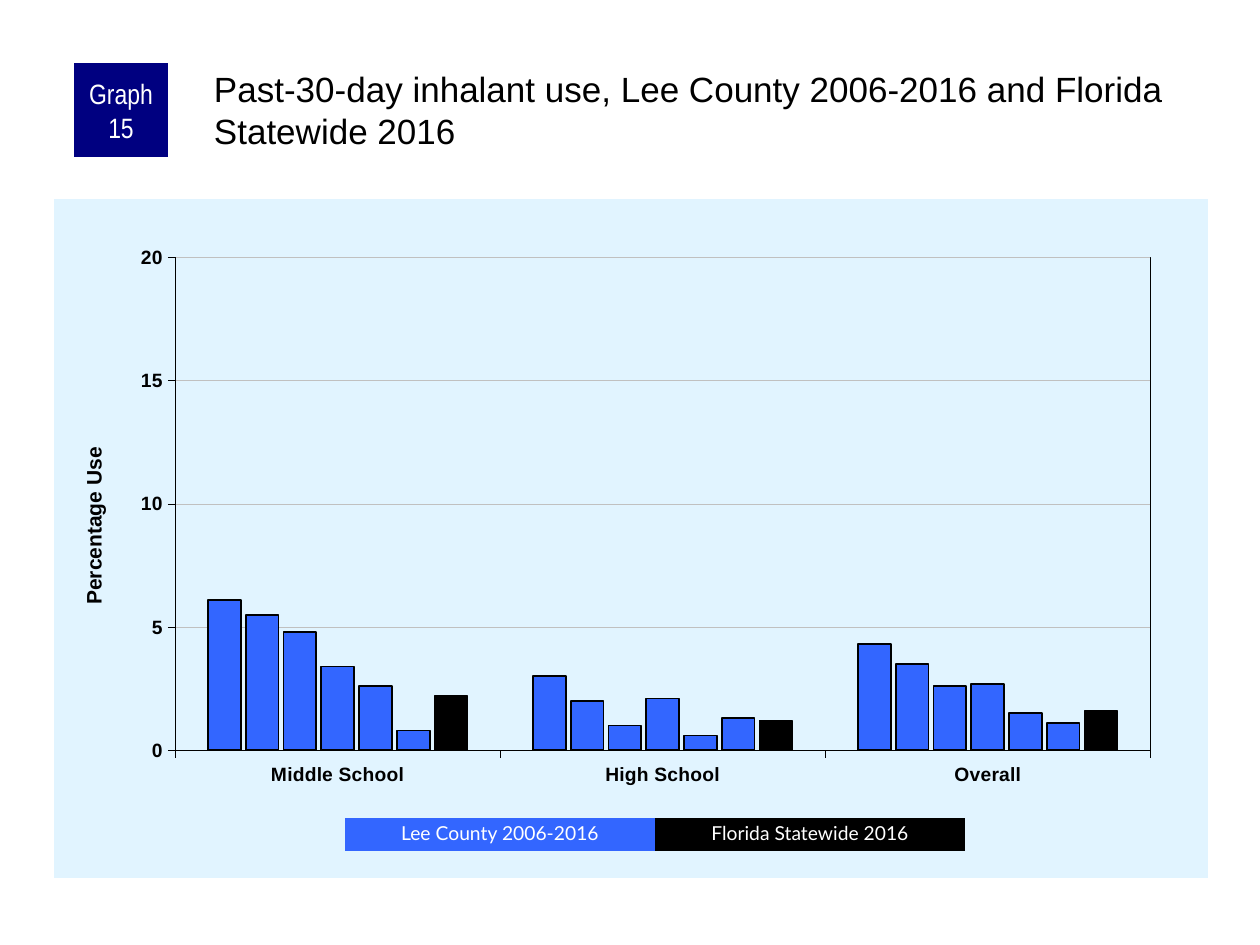
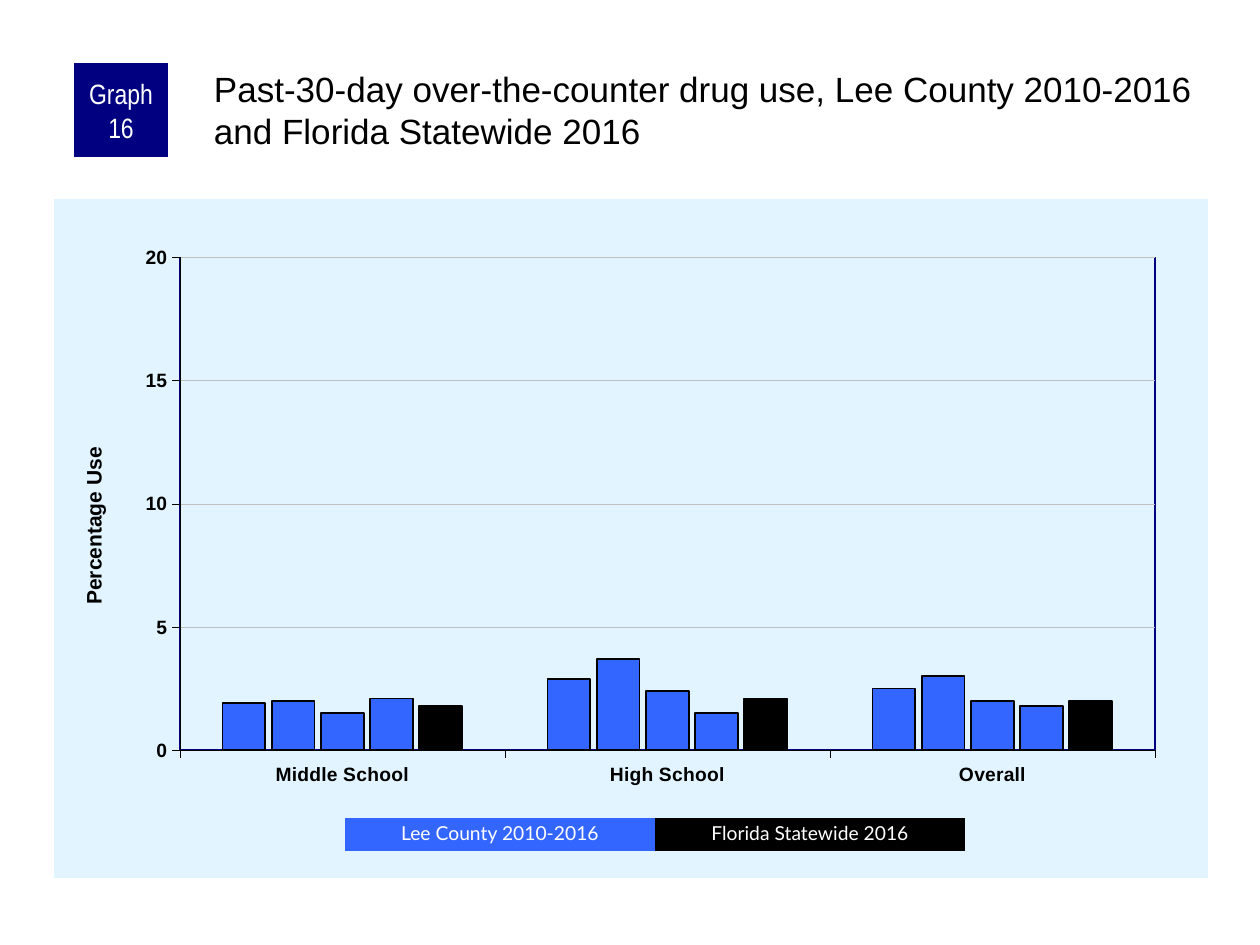
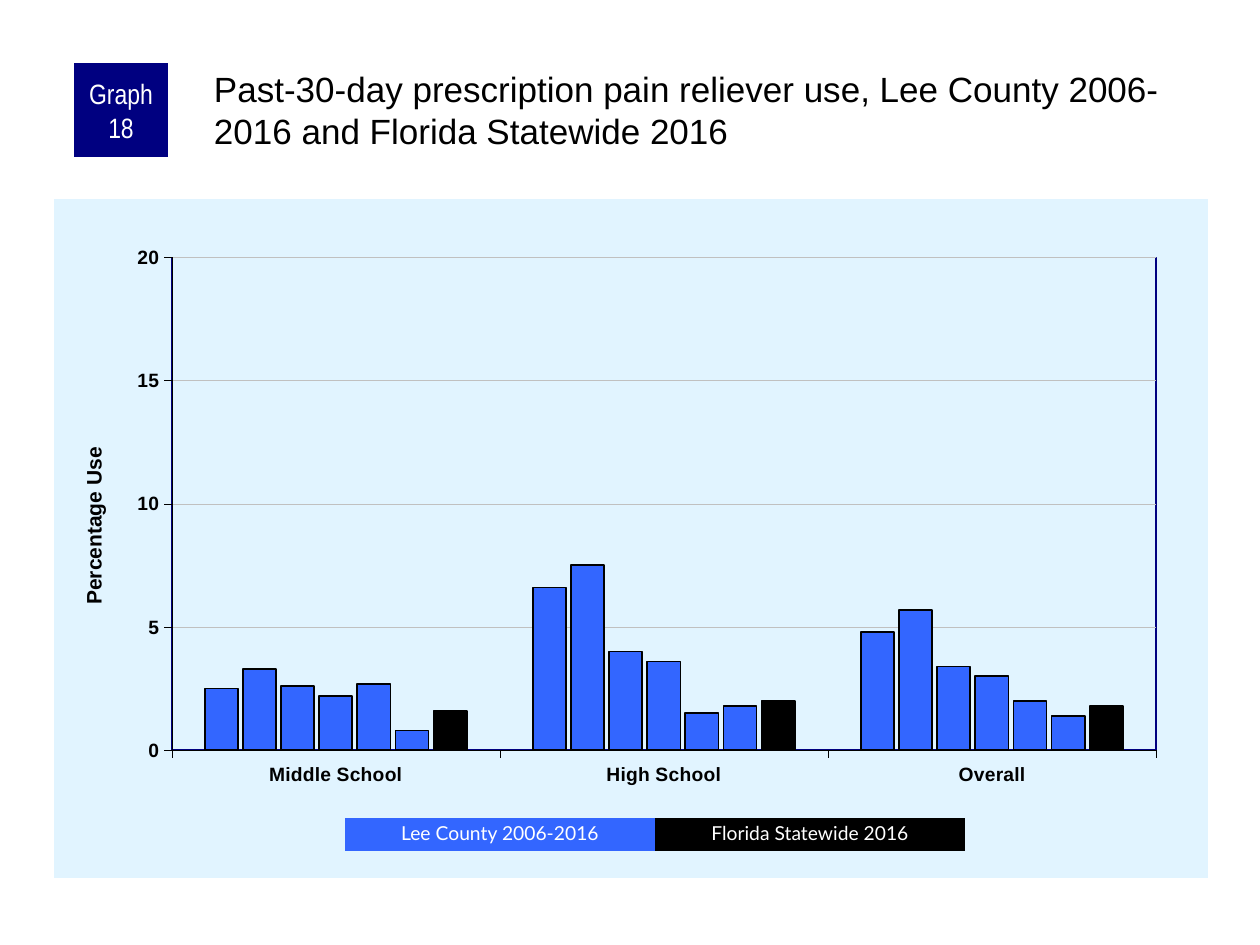
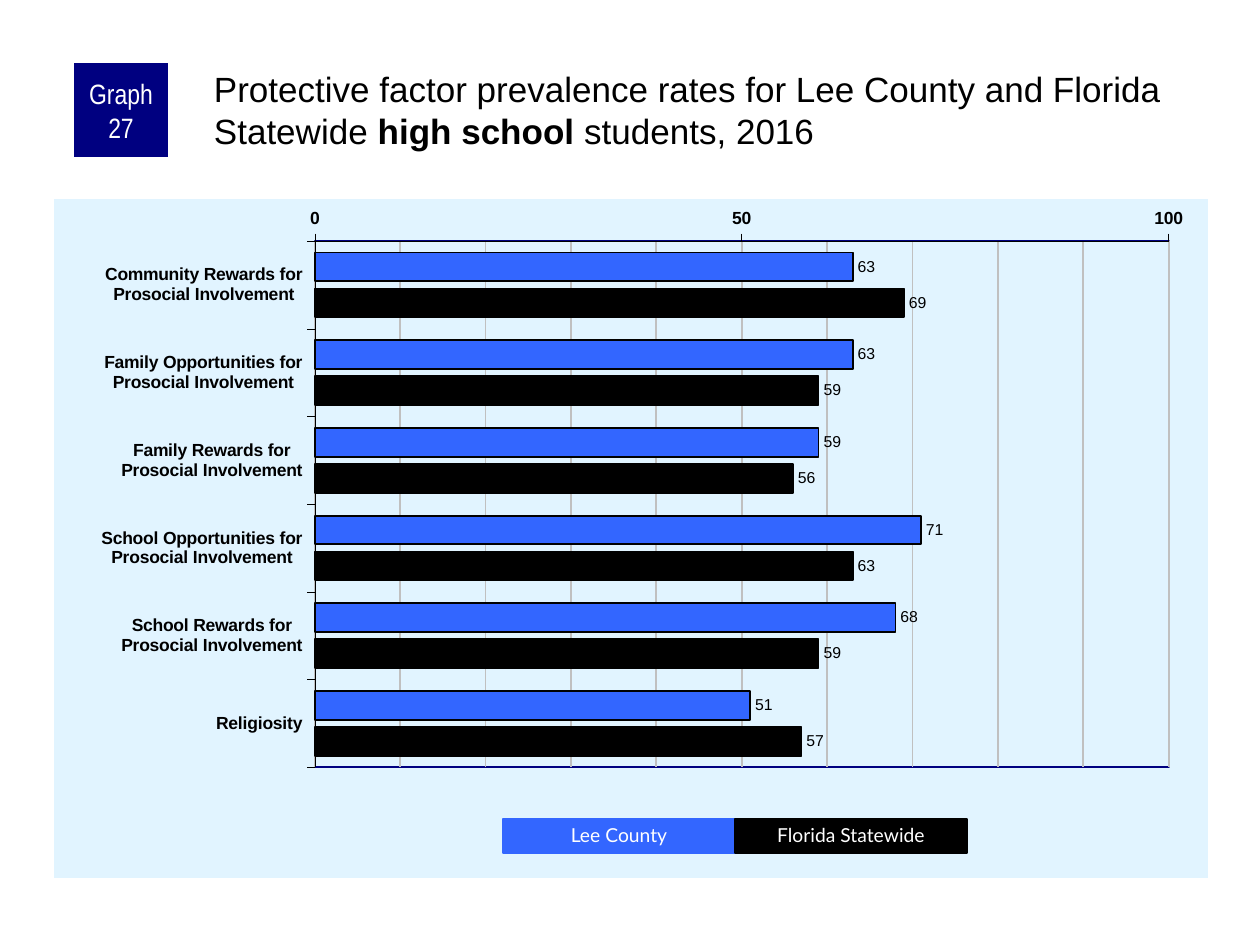
from pptx import Presentation
from pptx.chart.data import CategoryChartData as Data
from pptx.dml.color import RGBColor
from pptx.enum.chart import XL_AXIS_CROSSES as Cross
from pptx.enum.chart import XL_CHART_TYPE as Kind
from pptx.enum.chart import XL_LABEL_POSITION as Spot
from pptx.enum.chart import XL_TICK_MARK as Tick
from pptx.enum.shapes import MSO_SHAPE as Shape
from pptx.enum.text import MSO_ANCHOR as Anchor
from pptx.enum.text import PP_ALIGN as Align
from pptx.oxml import parse_xml
from pptx.oxml.ns import nsdecls, qn
from pptx.util import Emu, Pt

BLUE = RGBColor(0x33, 0x66, 0xFF)
NAVY = RGBColor(0x00, 0x00, 0x80)
SKY = RGBColor(0xE1, 0xF4, 0xFF)
GRAY = RGBColor(0xC0, 0xC0, 0xC0)
BLACK = RGBColor(0x00, 0x00, 0x00)
WHITE = RGBColor(0xFF, 0xFF, 0xFF)

PAGE = (1260, 945)
CHART = (54, 199, 1154, 679)
BADGE = (74, 63, 94, 94)
TITLE = (210, 63, 998, 105)

BADGE_FONT = dict(name="Arial Narrow", size=Pt(16))
TITLE_FONT = dict(name="Arial", size=Pt(20))
KEY_FONT = dict(name="Lato", size=Pt(11))

LEVELS = ["Middle School", "High School", "Overall"]
FACTORS = [
    "Community Rewards for\nProsocial Involvement",
    "Family Opportunities for\nProsocial Involvement",
    "Family Rewards for\nProsocial Involvement",
    "School Opportunities for\nProsocial Involvement",
    "School Rewards for\nProsocial Involvement",
    "Religiosity",
]

COLUMN = dict(
    kind=Kind.COLUMN_CLUSTERED, cats=LEVELS, gap=200, lap=-15, size=11,
    scale=dict(minimum_scale=0, maximum_scale=20, major_unit=5),
    grid=0.25, key=(345, 818, 310, 33), edge=(NAVY, 1), bar=False,
)
BAR = dict(
    kind=Kind.BAR_CLUSTERED, cats=FACTORS, gap=80, lap=-25, size=10,
    scale=dict(minimum_scale=0, maximum_scale=100, major_unit=50),
    grid=1, key=(503, 819, 232, 34), edge=(NAVY, 1), bar=True,
)

SLIDES = [
    COLUMN | dict(
        num=15,
        title=["Past-30-day inhalant use, Lee County 2006-2016 and Florida Statewide 2016"],
        keys=["Lee County 2006-2016", "Florida Statewide 2016"],
        plot=(0.105, 0.086, 0.845, 0.726),
        edge=(BLACK, 0.25),
        rows=[(6.1, 3, 4.3), (5.5, 2, 3.5), (4.8, 1, 2.6), (3.4, 2.1, 2.7),
              (2.6, 0.6, 1.5), (0.8, 1.3, 1.1), (2.2, 1.2, 1.6)],
    ),
    COLUMN | dict(
        num=16,
        title=["Past-30-day over-the-counter drug use, Lee County 2010-2016 "
               "and Florida Statewide 2016"],
        keys=["Lee County 2010-2016", "Florida Statewide 2016"],
        plot=(0.109, 0.086, 0.845, 0.726),
        rows=[(1.9, 2.9, 2.5), (2, 3.7, 3), (1.5, 2.4, 2), (2.1, 1.5, 1.8),
              (1.8, 2.1, 2)],
    ),
    COLUMN | dict(
        num=18,
        title=["Past-30-day prescription pain reliever use, Lee County 2006-2016 "
               "and Florida Statewide 2016"],
        keys=["Lee County 2006-2016", "Florida Statewide 2016"],
        plot=(0.102, 0.086, 0.853, 0.726),
        rows=[(2.5, 6.6, 4.8), (3.3, 7.5, 5.7), (2.6, 4, 3.4), (2.2, 3.6, 3),
              (2.7, 1.5, 2), (0.8, 1.8, 1.4), (1.6, 2, 1.8)],
    ),
    BAR | dict(
        num=27,
        title=["Protective factor prevalence rates for Lee County and Florida Statewide ",
               "high school ", "students, 2016"],
        keys=["Lee County", "Florida Statewide"],
        plot=(0.226, 0.062, 0.74, 0.775),
        rows=[(63, 63, 59, 71, 68, 51), (69, 59, 56, 63, 59, 57)],
    ),
]


def px(n):
    return Emu(round(n * 914400 / 126))


def put(item, vals):
    for name, val in vals.items():
        setattr(item, name, val)


def style(font, vals, color):
    put(font, vals)
    font.color.rgb = color


def stroke(line, color, width):
    line.color.rgb = color
    line.width = Pt(width)


def box(slide, area, text, fill, font, **frame):
    shape = slide.shapes.add_shape(Shape.RECTANGLE, *map(px, area))
    shape.shadow.inherit = False
    shape.fill.solid()
    shape.fill.fore_color.rgb = fill
    shape.line.fill.background()
    body = shape.text_frame
    put(body, dict(word_wrap=True, vertical_anchor=Anchor.MIDDLE) | frame)
    para = body.paragraphs[0]
    para.alignment = Align.CENTER
    run = para.add_run()
    run.text = text
    style(run.font, font, WHITE)
    return shape


def head(slide, parts):
    body = slide.shapes.add_textbox(*map(px, TITLE)).text_frame
    put(body, dict(word_wrap=True, margin_left=px(4), margin_top=px(4),
                   margin_right=0, margin_bottom=0))
    for i, part in enumerate(parts):
        run = body.paragraphs[0].add_run()
        run.text = part
        style(run.font, TITLE_FONT | dict(bold=i == 1), BLACK)


def layout(host, spot, inner, **vals):
    for old in host.findall(qn("c:layout")):
        host.remove(old)
    target = '<c:layoutTarget val="inner"/>' if inner else ""
    modes = "".join(f'<c:{k}Mode val="edge"/>' for k in vals if k in "xy")
    sizes = "".join(f'<c:{k} val="{v}"/>' for k, v in vals.items())
    host.insert(spot, parse_xml(
        f'<c:layout {nsdecls("c")}><c:manualLayout>{target}{modes}{sizes}'
        "</c:manualLayout></c:layout>"))


def panel(fill, line):
    return parse_xml(f'<c:spPr {nsdecls("c", "a")}>{fill}{line}</c:spPr>')


def solid(color):
    return f'<a:solidFill><a:srgbClr val="{color}"/></a:solidFill>'


def rule(color, width):
    return f'<a:ln w="{Pt(width)}">{solid(color)}</a:ln>'


def frame(chart, plot, edge):
    root = chart._chartSpace.find(qn("c:chart"))
    root.addnext(panel(solid(SKY), "<a:ln><a:noFill/></a:ln>"))
    area = root.find(qn("c:plotArea"))
    layout(area, 0, True, **dict(zip("xywh", plot)))
    area.append(panel("<a:noFill/>", rule(*edge)))


def name_axis(axis):
    title = axis.axis_title
    run = title.text_frame.paragraphs[0].add_run()
    run.text = "Percentage Use"
    style(run.font, dict(name="Arial", size=Pt(12), bold=True), BLACK)
    node = title._element
    turn = node.find(".//" + qn("a:bodyPr"))
    turn.set("rot", "-5400000")
    turn.set("vert", "horz")
    layout(node, 1, False, x=0.02, y=0.36)


def graph(slide, page):
    data = Data()
    data.categories = page["cats"]
    for i, row in enumerate(page["rows"], 1):
        data.add_series(f"Series {i}", row)
    chart = slide.shapes.add_chart(page["kind"], *map(px, CHART), data).chart
    put(chart, dict(has_title=False, has_legend=False))
    style(chart.font, dict(name="Arial", size=Pt(9)), BLACK)
    cat, val = chart.category_axis, chart.value_axis
    for axis in (cat, val):
        put(axis, dict(major_tick_mark=Tick.OUTSIDE, minor_tick_mark=Tick.NONE))
        stroke(axis.format.line, BLACK, 0.25)
        style(axis.tick_labels.font,
              dict(name="Arial", size=Pt(page["size"]), bold=True), BLACK)
    put(val, page["scale"] | dict(has_major_gridlines=True))
    stroke(val.major_gridlines.format.line, GRAY, page["grid"])
    plot = chart.plots[0]
    put(plot, dict(gap_width=page["gap"], overlap=page["lap"],
                   vary_by_categories=False))
    if page["bar"]:
        put(cat, dict(reverse_order=True, crosses=Cross.MAXIMUM))
        put(val, dict(minor_unit=10, has_minor_gridlines=True))
        minor = val._element.find(qn("c:minorGridlines"))
        minor.append(panel("", rule(GRAY, page["grid"])))
        plot.has_data_labels = True
        tags = plot.data_labels
        put(tags, dict(show_value=True, position=Spot.OUTSIDE_END))
        style(tags.font, dict(name="Arial", size=Pt(9)), BLACK)
    else:
        name_axis(val)
    last = len(page["rows"]) - 1
    for i, bars in enumerate(plot.series):
        bars.invert_if_negative = False
        bars.format.fill.solid()
        bars.format.fill.fore_color.rgb = BLACK if i == last else BLUE
        stroke(bars.format.line, BLACK, 1)
    frame(chart, page["plot"], page["edge"])


def legend(slide, page):
    left, top, wide, high = page["key"]
    for i, (text, color) in enumerate(zip(page["keys"], (BLUE, BLACK))):
        key = box(slide, (left + i * wide, top, wide, high), text, color, KEY_FONT)
        key.text_frame.paragraphs[0].line_spacing = 0.9
        if page["bar"]:
            stroke(key.line, color, 0.75)


def main():
    deck = Presentation()
    deck.slide_width, deck.slide_height = map(px, PAGE)
    for page in SLIDES:
        slide = deck.slides.add_slide(deck.slide_layouts[6])
        graph(slide, page)
        box(slide, BADGE, f"Graph {page['num']}", NAVY, BADGE_FONT,
            margin_left=px(6), margin_right=px(6), margin_top=0, margin_bottom=0)
        head(slide, page["title"])
        legend(slide, page)
    deck.save("out.pptx")


if __name__ == "__main__":
    main()
